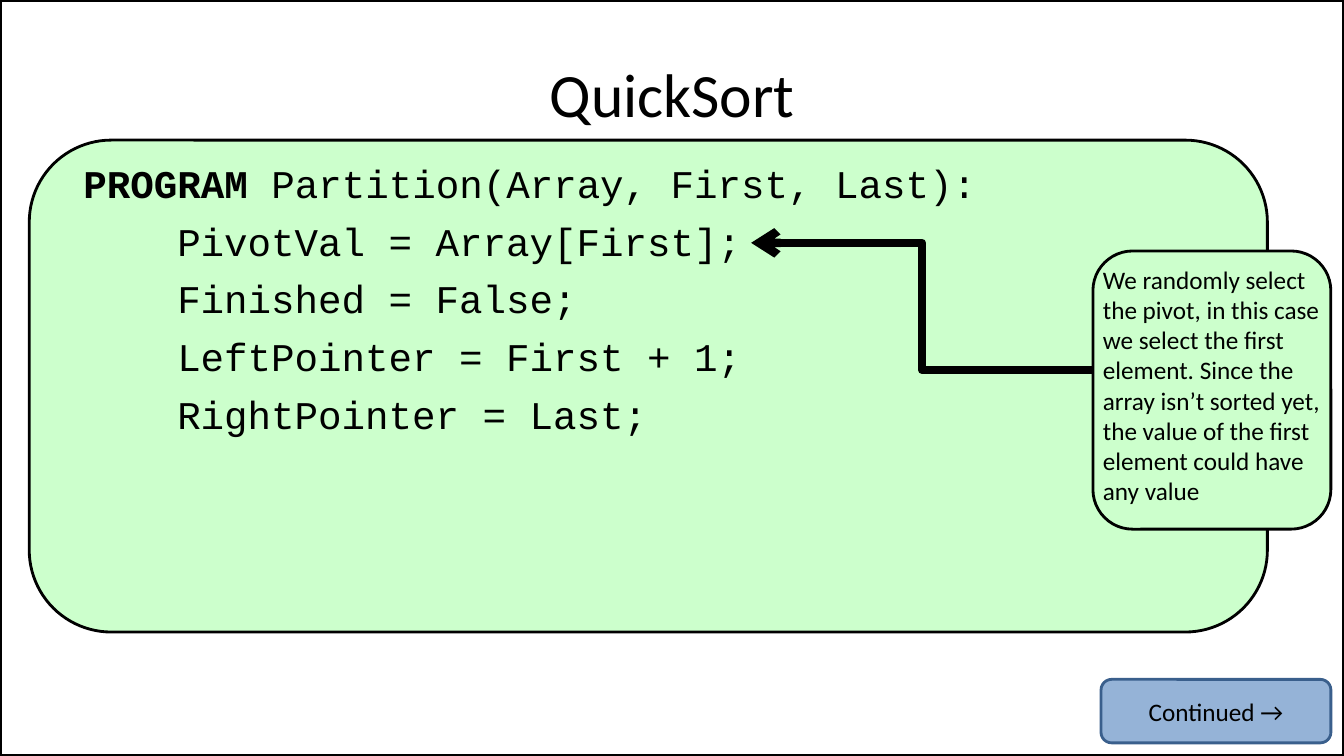
from lxml import etree
from pptx import Presentation
from pptx.dml.color import RGBColor
from pptx.enum.shapes import MSO_CONNECTOR, MSO_SHAPE
from pptx.enum.text import MSO_ANCHOR, PP_ALIGN
from pptx.oxml.ns import qn
from pptx.util import Inches, Pt

RECTANGLE = MSO_SHAPE.RECTANGLE
ROUNDED = MSO_SHAPE.ROUNDED_RECTANGLE
ELBOW = MSO_CONNECTOR.ELBOW
MIDDLE = MSO_ANCHOR.MIDDLE
TOP = MSO_ANCHOR.TOP
LEFT = PP_ALIGN.LEFT
CENTER = PP_ALIGN.CENTER

COLORS = {
    "ink": "000000",
    "panel": "CCFFCC",
    "button": "95B3D7",
    "button_line": "3A5F8C",
}


def add_panel(page, kind, place, fill, line, width):
    panel = page.shapes.add_shape(kind, *map(Inches, place))
    panel.shadow.inherit = False
    if fill:
        panel.fill.solid()
        panel.fill.fore_color.rgb = RGBColor.from_string(COLORS[fill])
    else:
        panel.fill.background()
    panel.line.color.rgb = RGBColor.from_string(COLORS[line])
    panel.line.width = Pt(width)
    return panel


def write_lines(box, lines, size, font="Calibri", align=LEFT, anchor=TOP, wrap=True):
    """Fill a shape with one paragraph per line in a single style."""
    frame = box.text_frame
    frame.word_wrap = wrap
    frame.vertical_anchor = anchor
    frame.text = "\n".join(lines)
    for para in frame.paragraphs:
        para.alignment = align
        for span in para.runs:
            span.font.name = font
            span.font.size = Pt(size)
            span.font.color.rgb = RGBColor.from_string(COLORS["ink"])
    return frame


deck = Presentation()
deck.slide_width = Inches(13.33)
deck.slide_height = Inches(7.5)
page = deck.slides.add_slide(deck.slide_layouts[6])

add_panel(page, RECTANGLE, (0, 0, 13.33, 7.5), None, "ink", 3)
add_panel(page, ROUNDED, (0.29, 1.39, 12.28, 4.88), "panel", "ink", 2)

# Program listing: the body is indented four characters under its header
code_lines = [
    "Partition(Array, First, Last):",
    "PivotVal = Array[First];",
    "Finished = False;",
    "LeftPointer = First + 1;",
    "RightPointer = Last;",
]
code_box = page.shapes.add_textbox(Inches(0.67), Inches(1.53), Inches(12), Inches(4.95))
code_box.text_frame.text = ""
code = write_lines(code_box, ["PROGRAM "] + code_lines[1:], 28, "Courier New")
keyword = code.paragraphs[0].runs[0]
keyword.font.bold = True
header = code.paragraphs[0].add_run()
header.text = code_lines[0]
header.font.name = keyword.font.name
header.font.size = keyword.font.size
header.font.color.rgb = keyword.font.color.rgb
for number, para in enumerate(code.paragraphs):
    para.space_before = Pt(7.6)
    margin = Inches(0.06 if number == 0 else 0.99)
    para._p.get_or_add_pPr().set("marL", str(margin))

title_box = page.shapes.add_textbox(Inches(0.67), Inches(0.3), Inches(12), Inches(1.25))
write_lines(title_box, ["QuickSort"], 44, align=CENTER, anchor=MIDDLE)

# Note on the pivot, with its arrow to the code line
add_panel(page, ROUNDED, (10.84, 2.49, 2.36, 2.76), "panel", "ink", 2)
arrow = page.shapes.add_connector(
    ELBOW, Inches(10.84), Inches(3.67), Inches(7.45), Inches(2.41)
)
arrow.line.color.rgb = RGBColor.from_string(COLORS["ink"])
arrow.line.width = Pt(6)
etree.SubElement(arrow.line._get_or_add_ln(), qn("a:tailEnd"), type="arrow")
etree.SubElement(arrow._element.spPr, qn("a:effectLst"))

note_lines = [
    "We randomly select",
    "the pivot, in this case",
    "we select the first",
    "element. Since the",
    "array isn’t sorted yet,",
    "the value of the first",
    "element could have",
    "any value",
]
note_box = page.shapes.add_textbox(Inches(10.84), Inches(2.57), Inches(2.43), Inches(2.52))
write_lines(note_box, note_lines, 18, wrap=False)

button = add_panel(page, ROUNDED, (10.92, 6.74, 2.28, 0.63), "button", "button_line", 2)
write_lines(button, ["Continued →"], 18, align=CENTER, anchor=MIDDLE)

deck.save("out.pptx")
